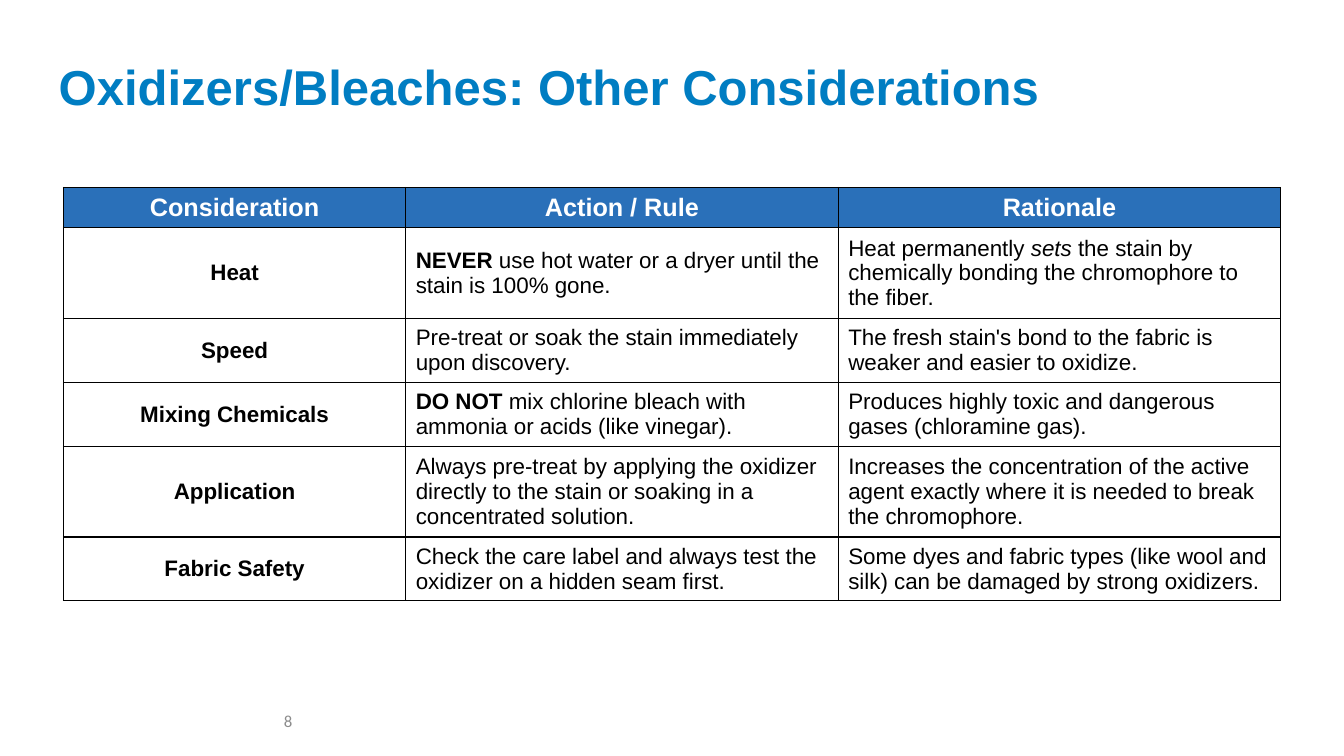
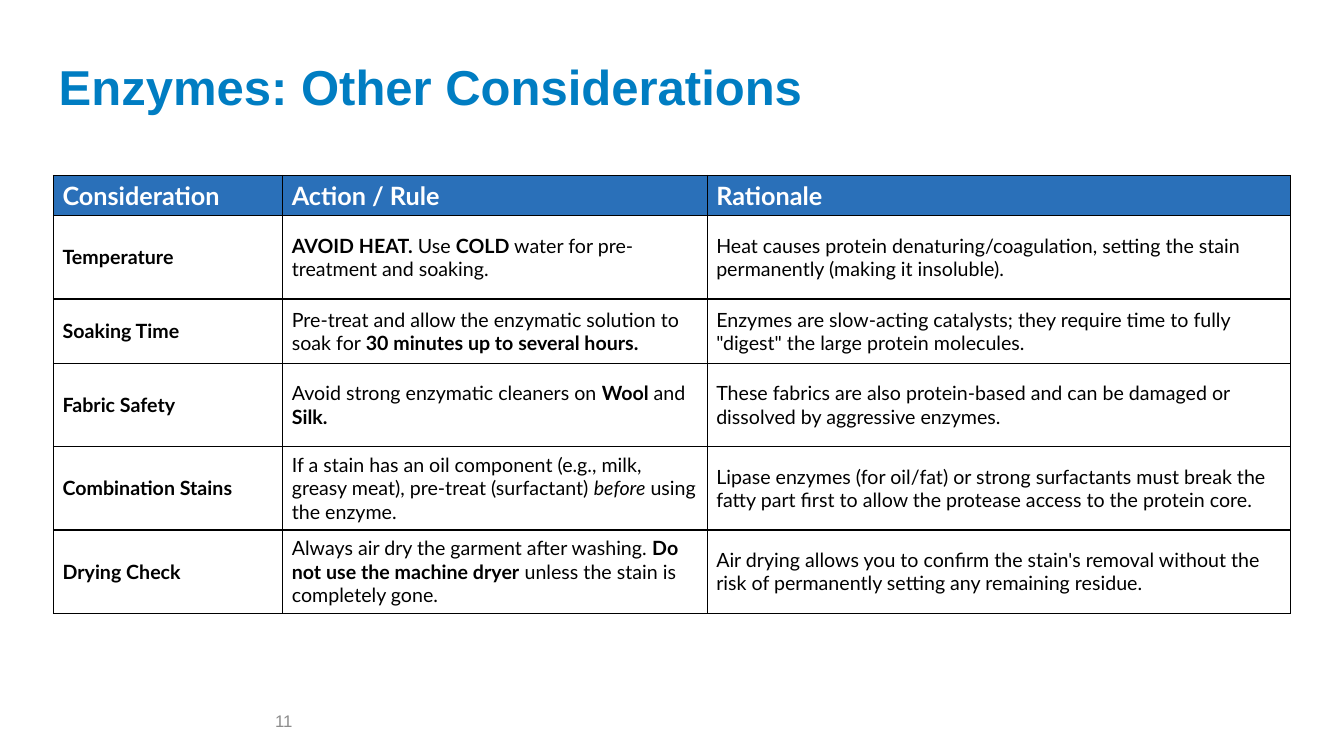
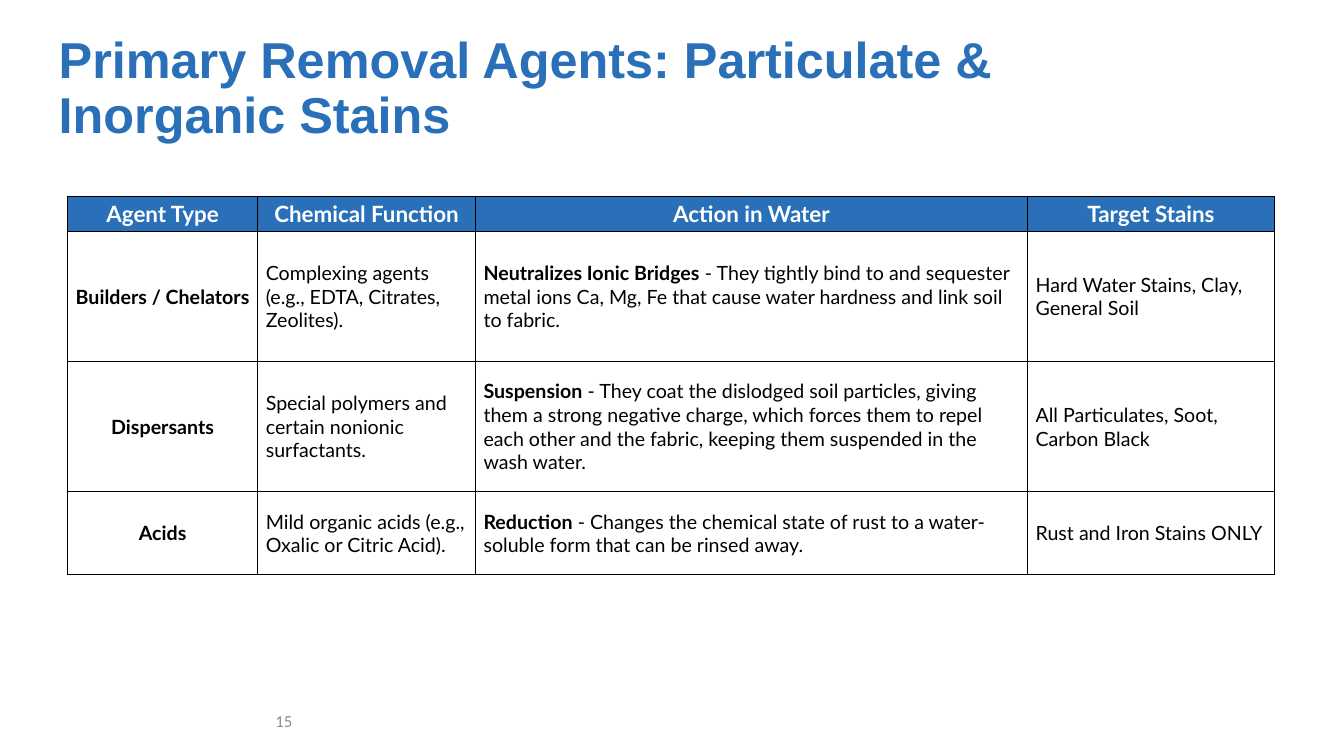
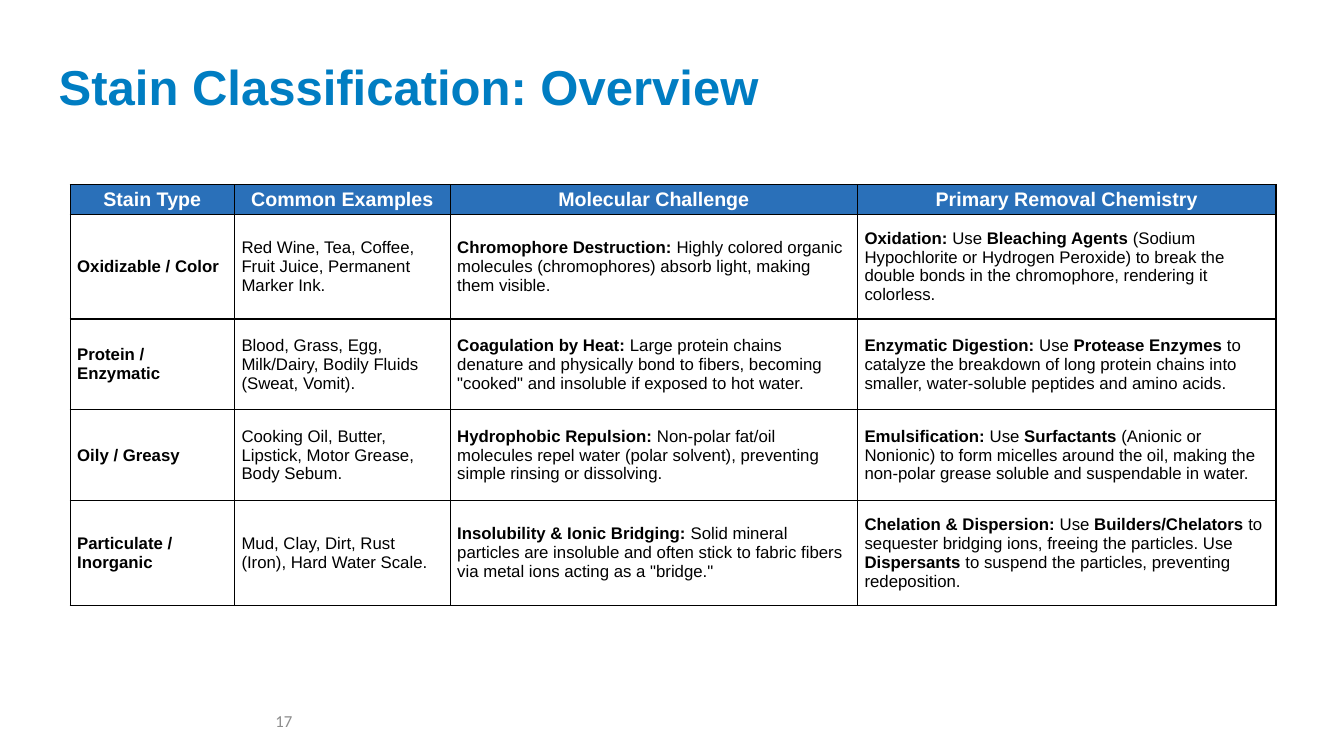
from dataclasses import dataclass
from typing import NamedTuple

from lxml import etree
from pptx import Presentation
from pptx import util as u
from pptx.dml.color import RGBColor
from pptx.enum import text
from pptx.oxml import ns

LEFT, CENTER, RIGHT = text.PP_ALIGN.LEFT, text.PP_ALIGN.CENTER, text.PP_ALIGN.RIGHT
SLIDE_WIDTH, SLIDE_HEIGHT = u.Inches(13.33), u.Inches(7.5)


@dataclass(frozen=True)
class Theme:
    title: str = "007DC2"
    header_fill: str = "2A70B9"
    header_text: str = "FFFFFF"
    body_text: str = "000000"
    border: str = "000000"
    page_text: str = "8C8C8C"
    title_font: str = "Arial"
    title_size: int = 35
    large_title_size: int = 36
    page_size: int = 12
    border_width: float = 1


class Box(NamedTuple):
    """Left, top, width and height in percent of the slide."""
    left: float
    top: float
    width: float
    height: float


class TextStyle(NamedTuple):
    font: str
    size: int
    color: str
    bold: bool = False


@dataclass(frozen=True)
class TableDesign:
    """Positions, columns and rows are in percent of the slide; insets in inches.

    A row of height 0 grows to fit its text.
    """
    left: float
    top: float
    height: float
    columns: tuple[float, ...]
    rows: tuple[float, ...]
    font: str
    header_size: int
    body_size: int
    inset_x: float = 0.1
    inset_y: float = 0.05
    header_alignment: text.PP_ALIGN = CENTER
    label_alignment: text.PP_ALIGN = CENTER


@dataclass(frozen=True)
class TableSlide:
    title: str
    page: str
    design: TableDesign
    header: tuple[str, ...]
    body: tuple[tuple[str, ...], ...]
    title_size: int = Theme.title_size
    title_color: str = Theme.title
    page_font: str = "Calibri"


THEME = Theme()
TITLE_BOX = Box(3.62, 2.22, 78.84, 19.33)
PAGE_BOX = Box(0, 92.67, 22.5, 5.33)

# In table text, *stars* make bold and _underscores_ make italic.
SLIDES = (
    TableSlide(
        title="Oxidizers/Bleaches: Other Considerations",
        page="8",
        design=TableDesign(
            left=4.73, top=24.8, height=54.67,
            columns=(25.46, 32.18, 32.93), rows=(0,) * 6,
            font="Arial", header_size=18, body_size=16,
        ),
        header=("Consideration", "Action / Rule", "Rationale"),
        body=(
            ("*Heat*",
             "*NEVER* use hot water or a dryer until the stain is 100% gone.",
             "Heat permanently _sets_ the stain by chemically bonding the chromophore to the fiber."),
            ("*Speed*",
             "Pre-treat or soak the stain immediately upon discovery.",
             "The fresh stain's bond to the fabric is weaker and easier to oxidize."),
            ("*Mixing Chemicals*",
             "*DO NOT* mix chlorine bleach with ammonia or acids (like vinegar).",
             "Produces highly toxic and dangerous gases (chloramine gas)."),
            ("*Application*",
             "Always pre-treat by applying the oxidizer directly to the stain or soaking in a "
             "concentrated solution.",
             "Increases the concentration of the active agent exactly where it is needed to break "
             "the chromophore."),
            ("*Fabric Safety*",
             "Check the care label and always test the oxidizer on a hidden seam first.",
             "Some dyes and fabric types (like wool and silk) can be damaged by strong oxidizers."),
        ),
    ),
    TableSlide(
        title="Enzymes: Other Considerations",
        page="11",
        page_font="Arial",
        design=TableDesign(
            left=3.98, top=23.2, height=57.73,
            columns=(17.06, 31.58, 43.43), rows=(5.07, 11.02, 8.5, 11.02, 11.02, 11.02),
            font="Lato", header_size=18, body_size=14, inset_x=0.09,
            header_alignment=LEFT, label_alignment=LEFT,
        ),
        header=("Consideration", "Action / Rule", "Rationale"),
        body=(
            ("*Temperature*",
             "*AVOID HEAT.* Use *COLD* water for pre-treatment and soaking.",
             "Heat causes protein denaturing/coagulation, setting the stain permanently (making it "
             "insoluble)."),
            ("*Soaking Time*",
             "Pre-treat and allow the enzymatic solution to soak for "
             "*30 minutes up to several hours.*",
             "Enzymes are slow-acting catalysts; they require time to fully \"digest\" the large "
             "protein molecules."),
            ("*Fabric Safety*",
             "Avoid strong enzymatic cleaners on *Wool *and* Silk.*",
             "These fabrics are also protein-based and can be damaged or dissolved by aggressive "
             "enzymes."),
            ("*Combination Stains*",
             "If a stain has an oil component (e.g., milk, greasy meat), pre-treat (surfactant) "
             "_before_ using the enzyme.",
             "Lipase enzymes (for oil/fat) or strong surfactants must break the fatty part first "
             "to allow the protease access to the protein core."),
            ("*Drying Check*",
             "Always air dry the garment after washing. *Do not use the machine dryer* unless the "
             "stain is completely gone.",
             "Air drying allows you to confirm the stain's removal without the risk of permanently "
             "setting any remaining residue."),
        ),
    ),
    TableSlide(
        title="Primary Removal Agents: Particulate & Inorganic Stains",
        title_size=THEME.large_title_size,
        title_color=THEME.header_fill,
        page="15",
        design=TableDesign(
            left=5.03, top=26, height=50.13,
            columns=(14.15, 16.2, 41.08, 18.38), rows=(4.27, 17.22, 17.22, 10.95),
            font="Lato", header_size=16, body_size=14, inset_x=0.08, inset_y=0.04,
        ),
        header=("Agent Type", "Chemical Function", "Action in Water", "Target Stains"),
        body=(
            ("*Builders / Chelators*",
             "Complexing agents (e.g., EDTA, Citrates, Zeolites).",
             "*Neutralizes Ionic Bridges* - They tightly bind to and sequester metal ions Ca, Mg, "
             "Fe that cause water hardness and link soil to fabric.",
             "Hard Water Stains, Clay, General Soil"),
            ("*Dispersants*",
             "Special polymers and certain nonionic surfactants.",
             "*Suspension* - They coat the dislodged soil particles, giving them a strong negative "
             "charge, which forces them to repel each other and the fabric, keeping them suspended "
             "in the wash water.",
             "All Particulates, Soot, Carbon Black"),
            ("*Acids*",
             "Mild organic acids (e.g., Oxalic or Citric Acid).",
             "*Reduction* - Changes the chemical state of rust to a water-soluble form that can be "
             "rinsed away.",
             "Rust and Iron Stains ONLY"),
        ),
    ),
    TableSlide(
        title="Stain Classification: Overview",
        page="17",
        design=TableDesign(
            left=5.22, top=24.42, height=55.73,
            columns=(12.23, 16.05, 30.31, 31.13), rows=(3.87, 13.87, 12, 12, 13.87),
            font="Arial", header_size=14, body_size=12, inset_x=0.07, inset_y=0.03,
            label_alignment=LEFT,
        ),
        header=("Stain Type", "Common Examples", "Molecular Challenge",
                "Primary Removal Chemistry"),
        body=(
            ("*Oxidizable / Color*",
             "Red Wine, Tea, Coffee, Fruit Juice, Permanent Marker Ink.",
             "*Chromophore Destruction:* Highly colored organic molecules (chromophores) absorb "
             "light, making them visible.",
             "*Oxidation:* Use *Bleaching Agents* (Sodium Hypochlorite or Hydrogen Peroxide) to "
             "break the double bonds in the chromophore, rendering it colorless."),
            ("*Protein / Enzymatic*",
             "Blood, Grass, Egg, Milk/Dairy, Bodily Fluids (Sweat, Vomit).",
             "*Coagulation by Heat:* Large protein chains denature and physically bond to fibers, "
             "becoming \"cooked\" and insoluble if exposed to hot water.",
             "*Enzymatic Digestion:* Use *Protease Enzymes* to catalyze the breakdown of long "
             "protein chains into smaller, water-soluble peptides and amino acids."),
            ("*Oily / Greasy*",
             "Cooking Oil, Butter, Lipstick, Motor Grease, Body Sebum.",
             "*Hydrophobic Repulsion:* Non-polar fat/oil molecules repel water (polar solvent), "
             "preventing simple rinsing or dissolving.",
             "*Emulsification:* Use *Surfactants* (Anionic or Nonionic) to form micelles around "
             "the oil, making the non-polar grease soluble and suspendable in water."),
            ("*Particulate / Inorganic*",
             "Mud, Clay, Dirt, Rust (Iron), Hard Water Scale.",
             "*Insolubility & Ionic Bridging:* Solid mineral particles are insoluble and often "
             "stick to fabric fibers via metal ions acting as a \"bridge.\"",
             "*Chelation & Dispersion:* Use *Builders/Chelators* to sequester bridging ions, "
             "freeing the particles. Use *Dispersants* to suspend the particles, preventing "
             "redeposition."),
        ),
    ),
)


def across(percent: float) -> int:
    return round(SLIDE_WIDTH * percent / 100)


def down(percent: float) -> int:
    return round(SLIDE_HEIGHT * percent / 100)


def place(box: Box) -> tuple[int, int, int, int]:
    return across(box.left), down(box.top), across(box.width), down(box.height)


def add_run(paragraph, words: str, style: TextStyle, italic: bool = False) -> None:
    run = paragraph.add_run()
    run.text = words
    run.font.name = style.font
    run.font.size = u.Pt(style.size)
    run.font.color.rgb = RGBColor.from_string(style.color)
    run.font.bold = style.bold
    run.font.italic = italic


def add_marked_text(paragraph, marked: str, style: TextStyle) -> None:
    """Write one run for each stretch between bold and italic marks."""
    for bold_index, part in enumerate(marked.split("*")):
        part_style = style._replace(bold=style.bold or bold_index % 2 == 1)
        for italic_index, words in enumerate(part.split("_")):
            if words:
                add_run(paragraph, words, part_style, italic=italic_index % 2 == 1)


def add_title(slide, content: TableSlide) -> None:
    title = slide.shapes.title
    title.left, title.top, title.width, title.height = place(TITLE_BOX)
    frame = title.text_frame
    frame.word_wrap = True
    frame.auto_size = text.MSO_AUTO_SIZE.NONE
    frame.vertical_anchor = text.MSO_ANCHOR.MIDDLE
    paragraph = frame.paragraphs[0]
    paragraph.alignment = LEFT
    paragraph.line_spacing = 0.9
    paragraph.space_before = u.Pt(0)
    add_run(paragraph, content.title,
            TextStyle(THEME.title_font, content.title_size, content.title_color, bold=True))


def add_page_number(slide, content: TableSlide) -> None:
    frame = slide.shapes.add_textbox(*place(PAGE_BOX)).text_frame
    frame.word_wrap = True
    frame.vertical_anchor = text.MSO_ANCHOR.MIDDLE
    paragraph = frame.paragraphs[0]
    paragraph.alignment = RIGHT
    add_run(paragraph, content.page,
            TextStyle(content.page_font, THEME.page_size, THEME.page_text))


def add_borders(cell) -> None:
    properties = cell._tc.get_or_add_tcPr()
    for side in ("lnL", "lnR", "lnT", "lnB"):
        line = etree.SubElement(properties, ns.qn(f"a:{side}"),
                                w=str(u.Pt(THEME.border_width)))
        fill = etree.SubElement(line, ns.qn("a:solidFill"))
        etree.SubElement(fill, ns.qn("a:srgbClr"), val=THEME.border)


def fill_cell(cell, marked: str, design: TableDesign, style: TextStyle,
              alignment: text.PP_ALIGN) -> None:
    cell.margin_left = cell.margin_right = u.Inches(design.inset_x)
    cell.margin_top = cell.margin_bottom = u.Inches(design.inset_y)
    cell.vertical_anchor = text.MSO_ANCHOR.MIDDLE
    add_borders(cell)
    paragraph = cell.text_frame.paragraphs[0]
    paragraph.alignment = alignment
    add_marked_text(paragraph, marked, style)


def add_table(slide, content: TableSlide) -> None:
    design = content.design
    box = Box(design.left, design.top, sum(design.columns), design.height)
    graphic_frame = slide.shapes.add_table(len(design.rows), len(design.columns), *place(box))
    table = graphic_frame.table
    table.first_row = table.horz_banding = False
    for column, width in zip(table.columns, design.columns):
        column.width = across(width)
    for row, height in zip(table.rows, design.rows):
        row.height = down(height)
    graphic_frame.height = down(design.height)

    header_style = TextStyle(design.font, design.header_size, THEME.header_text, bold=True)
    for cell, words in zip(table.rows[0].cells, content.header):
        fill_cell(cell, words, design, header_style, design.header_alignment)
        cell.fill.solid()
        cell.fill.fore_color.rgb = RGBColor.from_string(THEME.header_fill)

    body_style = TextStyle(design.font, design.body_size, THEME.body_text)
    for row_index, entries in enumerate(content.body, start=1):
        for column_index, words in enumerate(entries):
            cell = table.cell(row_index, column_index)
            alignment = LEFT if column_index else design.label_alignment
            fill_cell(cell, words, design, body_style, alignment)
            cell.fill.background()


def main() -> None:
    presentation = Presentation()
    presentation.slide_width, presentation.slide_height = SLIDE_WIDTH, SLIDE_HEIGHT
    title_only = presentation.slide_layouts[5]
    for content in SLIDES:
        slide = presentation.slides.add_slide(title_only)
        add_title(slide, content)
        add_page_number(slide, content)
        add_table(slide, content)
    presentation.save("out.pptx")


if __name__ == "__main__":
    main()
